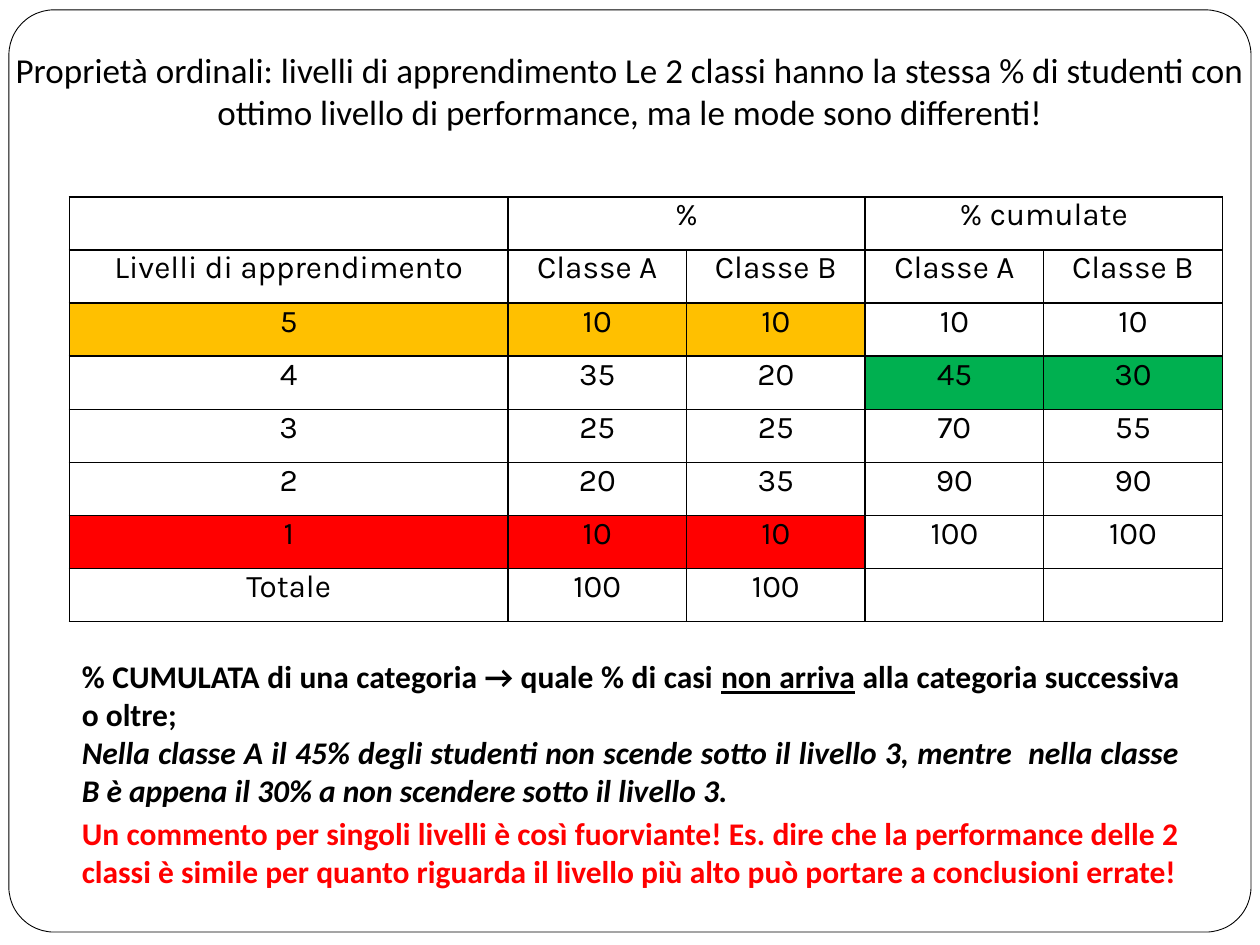
"""Builds a slide comparing ordinal learning levels of two classes."""
import pptx
import pptx.dml.color
import pptx.enum.shapes
import pptx.enum.text
import pptx.oxml
import pptx.oxml.ns
import pptx.util

Cm = pptx.util.Cm
Pt = pptx.util.Pt
ALIGN = pptx.enum.text.PP_ALIGN
COLORS = {"black": "000000", "white": "FFFFFF", "gold": "FFC000",
          "green": "00B050", "red": "FF0000"}

TITLE = ("Proprietà ordinali: livelli di apprendimento Le 2 classi hanno la stessa % di studenti "
         "con ottimo livello di performance, ma le mode sono differenti!")
CUMULATIVE = [
    [("% CUMULATA di una categoria → quale % di casi ", {}),
     ("non arriva", {"underline": True}),
     (" alla categoria successiva o oltre;", {})],
    [("Nella classe A il 45% degli studenti non scende sotto il livello 3, mentre  nella classe B "
      "è appena il 30% a non scendere sotto il livello 3.", {"italic": True})],
]
WARNING = [[("Un commento per singoli livelli è così fuorviante! Es. dire che la performance delle 2 "
             "classi è simile per quanto riguarda il livello più alto può portare a conclusioni "
             "errate!", {})]]
ROWS = [
    ["", "%", "", "% cumulate", ""],
    ["Livelli di apprendimento", "Classe A", "Classe B", "Classe A", "Classe B"],
    ["5", "10", "10", "10", "10"],
    ["4", "35", "20", "45", "30"],
    ["3", "25", "25", "70", "55"],
    ["2", "20", "35", "90", "90"],
    ["1", "10", "10", "100", "100"],
    ["Totale", "100", "100", "", ""],
]
HIGHLIGHTS = {2: ("gold", range(0, 3)), 3: ("green", range(3, 5)), 6: ("red", range(0, 3))}
COLUMN_WIDTHS = [8.84, 3.6, 3.6, 3.6, 3.6]
ROW_HEIGHT = 1.07


def rgb(name):
    """Return the named colour."""
    return pptx.dml.color.RGBColor.from_string(COLORS[name])


def style_span(span, font, size, color="black", **flags):
    """Format one run of text."""
    span.font.name = font
    span.font.size = Pt(size)
    span.font.color.rgb = rgb(color)
    for flag, value in flags.items():
        setattr(span.font, flag, value)


def add_frame(page):
    """Draw the rounded outline around the slide."""
    frame = page.shapes.add_shape(pptx.enum.shapes.MSO_SHAPE.ROUNDED_RECTANGLE,
                                  Cm(0.18), Cm(0.2), Cm(25.04), Cm(18.59))
    frame.adjustments[0] = 0.049
    frame.shadow.inherit = False
    frame.fill.solid()
    frame.fill.fore_color.rgb = rgb("white")
    frame.line.color.rgb = rgb("black")
    frame.line.width = Pt(0.5)


def add_text(page, place, paras, size, align, color="black", **flags):
    """Add a wrapped, vertically centred text box and return it."""
    box = page.shapes.add_textbox(*(Cm(length) for length in place))
    frame = box.text_frame
    frame.word_wrap = True
    frame.vertical_anchor = pptx.enum.text.MSO_ANCHOR.MIDDLE
    for index, spans in enumerate(paras):
        para = frame.add_paragraph() if index else frame.paragraphs[0]
        para.alignment = align
        for words, extra in spans:
            span = para.add_run()
            span.text = words
            style_span(span, "Calibri", size, color, **flags, **extra)
    return box


def set_borders(cell, widths):
    """Give the cell black borders, with widths in points by side."""
    properties = cell._tc.get_or_add_tcPr()
    for index, (side, width) in enumerate(widths.items()):
        properties.insert(index, pptx.oxml.parse_xml(
            f'<a:ln{side} {pptx.oxml.ns.nsdecls("a")} w="{Pt(width)}"><a:solidFill>'
            f'<a:srgbClr val="{COLORS["black"]}"/></a:solidFill></a:ln{side}>'))


def fill_cell(cell, words, row, column):
    """Write one table cell and set its fill and borders."""
    cell.margin_left = cell.margin_right = Cm(0.05)
    cell.margin_top = cell.margin_bottom = 0
    cell.text_frame.text = words
    para = cell.text_frame.paragraphs[0]
    para.alignment = ALIGN.CENTER
    for span in para.runs:
        style_span(span, "Karla", 18)
    color, columns = HIGHLIGHTS.get(row, (None, ()))
    if column in columns:
        cell.fill.solid()
        cell.fill.fore_color.rgb = rgb(color)
    else:
        cell.fill.background()
    set_borders(cell, {"L": 1.5 if column == 3 else 1, "R": 1.5 if column == 2 else 1,
                       "T": 1, "B": 1})


def add_levels_table(page):
    """Add the table of plain and cumulative percentages."""
    table = page.shapes.add_table(len(ROWS), len(COLUMN_WIDTHS), Cm(1.4), Cm(3.97),
                                  Cm(sum(COLUMN_WIDTHS)), Cm(ROW_HEIGHT * len(ROWS))).table
    table.first_row = table.horz_banding = False
    for column, width in zip(table.columns, COLUMN_WIDTHS):
        column.width = Cm(width)
    for row_index, values in enumerate(ROWS):
        table.rows[row_index].height = Cm(ROW_HEIGHT)
        for column_index, words in enumerate(values):
            fill_cell(table.cell(row_index, column_index), words, row_index, column_index)
    for first in (1, 3):
        table.cell(0, first).merge(table.cell(0, first + 1))


def main():
    """Build and save the deck."""
    deck = pptx.Presentation()
    deck.slide_width, deck.slide_height = Cm(25.4), Cm(19.05)
    page = deck.slides.add_slide(deck.slide_layouts[6])
    add_frame(page)
    title = add_text(page, (0, 1.4, 25.4, 2.31), [[(TITLE, {})]], 20, ALIGN.CENTER)
    title.text_frame.margin_top = 0
    title.text_frame.margin_bottom = Cm(1.45)
    add_levels_table(page)
    add_text(page, (1.4, 13.11, 22.63, 3.33), CUMULATIVE, 18, ALIGN.JUSTIFY, bold=True)
    add_text(page, (1.4, 16.28, 22.63, 1.8), WARNING, 18, ALIGN.JUSTIFY, "red", bold=True)
    deck.save("out.pptx")


if __name__ == "__main__":
    main()
